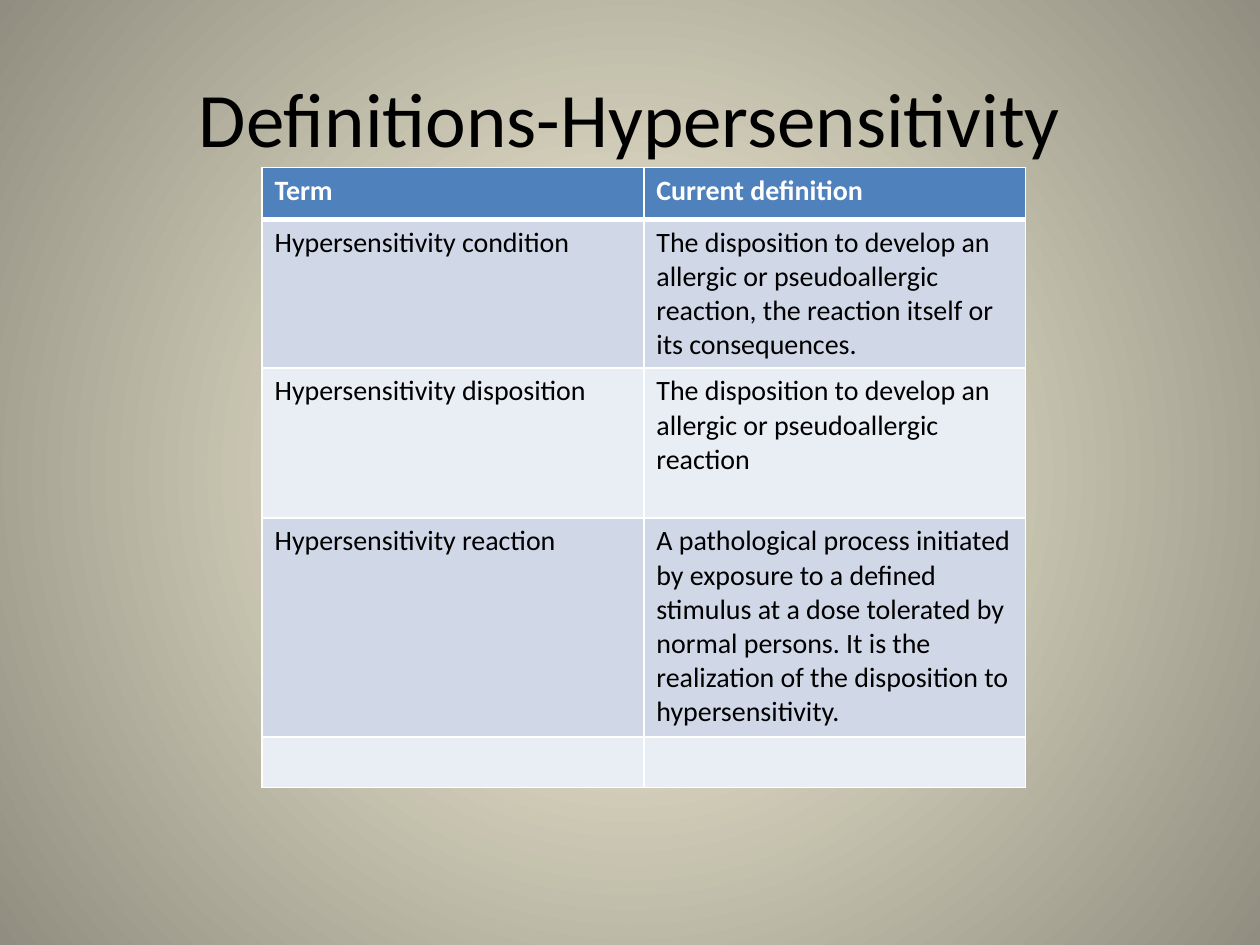
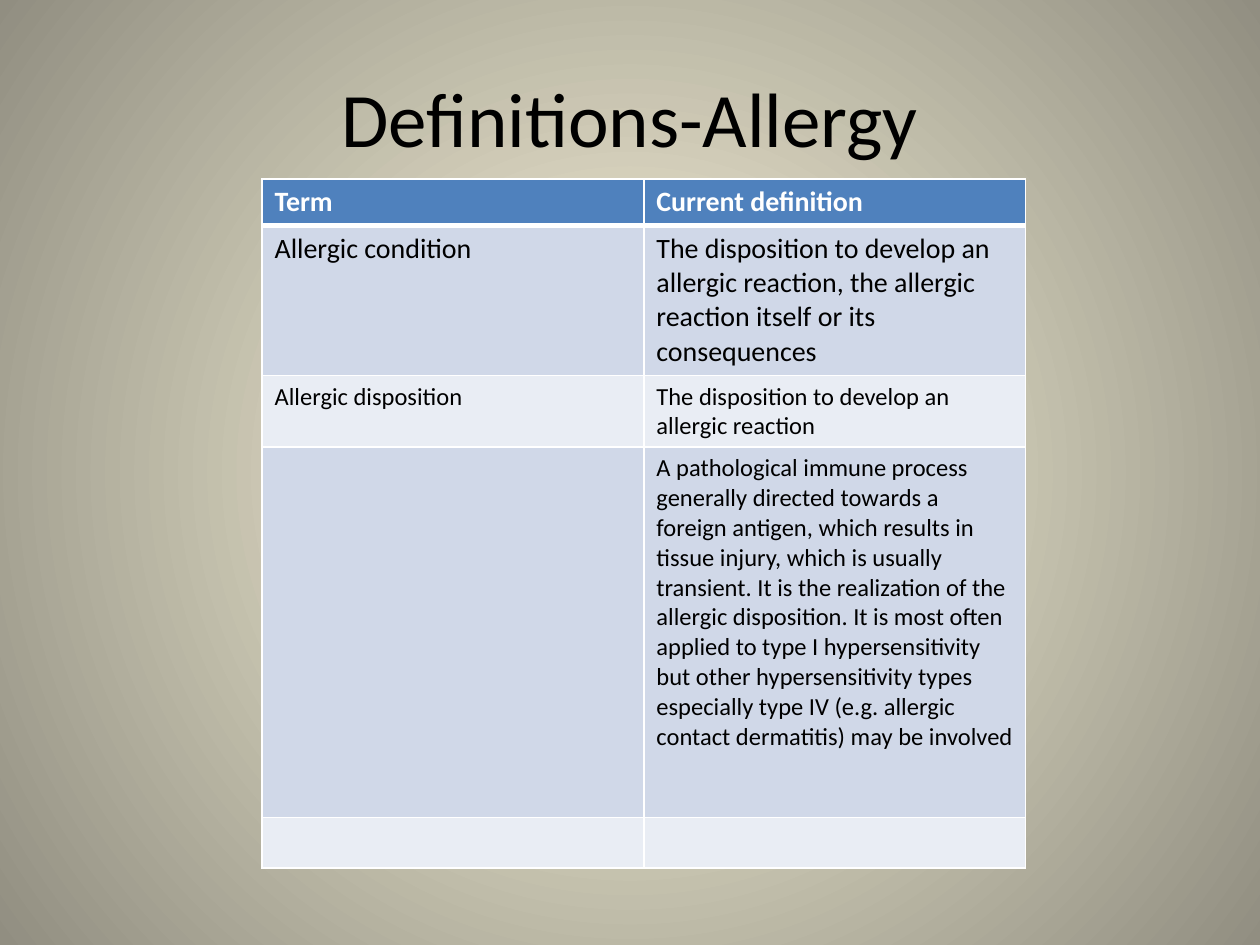
import pptx
import pptx.util
import pptx.dml.color
import pptx.enum.text
import pptx.oxml
import pptx.oxml.ns
from lxml import etree

Inches, Pt = pptx.util.Inches, pptx.util.Pt
qn = pptx.oxml.ns.qn

HEAD = ("Term", "Current definition")
# Each row: term, definition, text size, height
SLIDES = [
    {"title": "Definitions-Hypersensitivity", "top": 1.33, "rows": [
        (*HEAD, 16, 0.41),
        ("Hypersensitivity condition",
         "The disposition to develop an allergic or pseudoallergic reaction, "
         "the reaction itself or its consequences.", 16, 1.18),
        ("Hypersensitivity disposition",
         "The disposition to develop an allergic or pseudoallergic reaction",
         16, 1.19),
        ("Hypersensitivity reaction",
         "A pathological process initiated by exposure to a defined stimulus "
         "at a dose tolerated by normal persons. It is the realization of the "
         "disposition to hypersensitivity.", 16, 1.74),
        ("", "", 16, 0.4)]},
    {"title": "Definitions-Allergy", "top": 1.42, "rows": [
        (*HEAD, 16, 0.37),
        ("Allergic condition",
         "The disposition to develop an allergic reaction, the allergic "
         "reaction itself or its consequences", 16, 1.19),
        ("Allergic disposition",
         "The disposition to develop an allergic reaction", 14, 0.57),
        ("",
         "A pathological immune process generally directed towards a foreign "
         "antigen, which results in tissue injury, which is usually "
         "transient. It is the realization of the allergic disposition. It is "
         "most often applied to type I hypersensitivity but other "
         "hypersensitivity types especially type IV (e.g. allergic contact "
         "dermatitis) may be involved", 14, 2.94),
        ("", "", 16, 0.4)]},
]

COLORS = {"inner": "FCF7DD", "outer": "918E81", "text": "000000",
          "white": "FFFFFF", "head": "4F81BD", "odd": "D0D8E8",
          "even": "E9EDF4"}
FONT = "Calibri"
LEFT, COL = 2.08, 3.03


def rgb(name):
    return pptx.dml.color.RGBColor.from_string(COLORS[name])


def style(para, size, color, bold=False):
    for run in para.runs:
        font = run.font
        font.name, font.size, font.bold = FONT, Pt(size), bold
        font.color.rgb = rgb(color)


def paint_back(master):
    """Give every slide the radial glow."""
    fill = master.background.fill
    fill.gradient()
    for stop, name, pos in zip(fill.gradient_stops, ("inner", "outer"), (0, 1)):
        stop.color.rgb = rgb(name)
        stop.position = pos
    grad = next(master.element.iter(qn("a:gradFill")))
    for lin in grad.findall(qn("a:lin")):
        grad.remove(lin)
    glow = etree.SubElement(grad, qn("a:path"), {"path": "circle"})
    etree.SubElement(glow, qn("a:fillToRect"), dict.fromkeys("ltrb", "50000"))


def add_title(slide, text):
    box = slide.shapes.add_textbox(Inches(0.5), Inches(0.3), Inches(9), Inches(1.25))
    frame = box.text_frame
    frame.word_wrap = True
    frame.vertical_anchor = pptx.enum.text.MSO_ANCHOR.MIDDLE
    frame.text = text
    para = frame.paragraphs[0]
    para.alignment = pptx.enum.text.PP_ALIGN.CENTER
    style(para, 44, "text")


def add_edges(cell, row):
    """Draw white cell borders, with a thick rule below the header."""
    props = cell._tc.get_or_add_tcPr()
    for side in "LRTB":
        thick = (side, row) in (("B", 0), ("T", 1))
        line = etree.SubElement(props, qn("a:ln" + side),
                                {"w": str(Pt(3 if thick else 1))})
        solid = etree.SubElement(line, qn("a:solidFill"))
        etree.SubElement(solid, qn("a:srgbClr"), {"val": COLORS["white"]})


def add_terms(slide, top, rows):
    high = sum(row[-1] for row in rows)
    table = slide.shapes.add_table(len(rows), 2, Inches(LEFT), Inches(top),
                                   Inches(2 * COL), Inches(high)).table
    for col in table.columns:
        col.width = Inches(COL)
    for r, (*texts, size, height) in enumerate(rows):
        table.rows[r].height = Inches(height)
        back = "head" if r == 0 else "odd" if r % 2 else "even"
        for c, text in enumerate(texts):
            cell = table.cell(r, c)
            add_edges(cell, r)
            cell.fill.solid()
            cell.fill.fore_color.rgb = rgb(back)
            if text:
                cell.text_frame.text = text
                style(cell.text_frame.paragraphs[0], size,
                      "text" if r else "white", r == 0)


def main():
    prs = pptx.Presentation()
    prs.slide_width, prs.slide_height = Inches(10), Inches(7.5)
    paint_back(prs.slide_master)
    for item in SLIDES:
        slide = prs.slides.add_slide(prs.slide_layouts[6])
        add_title(slide, item["title"])
        add_terms(slide, item["top"], item["rows"])
    prs.save("out.pptx")


if __name__ == "__main__":
    main()
